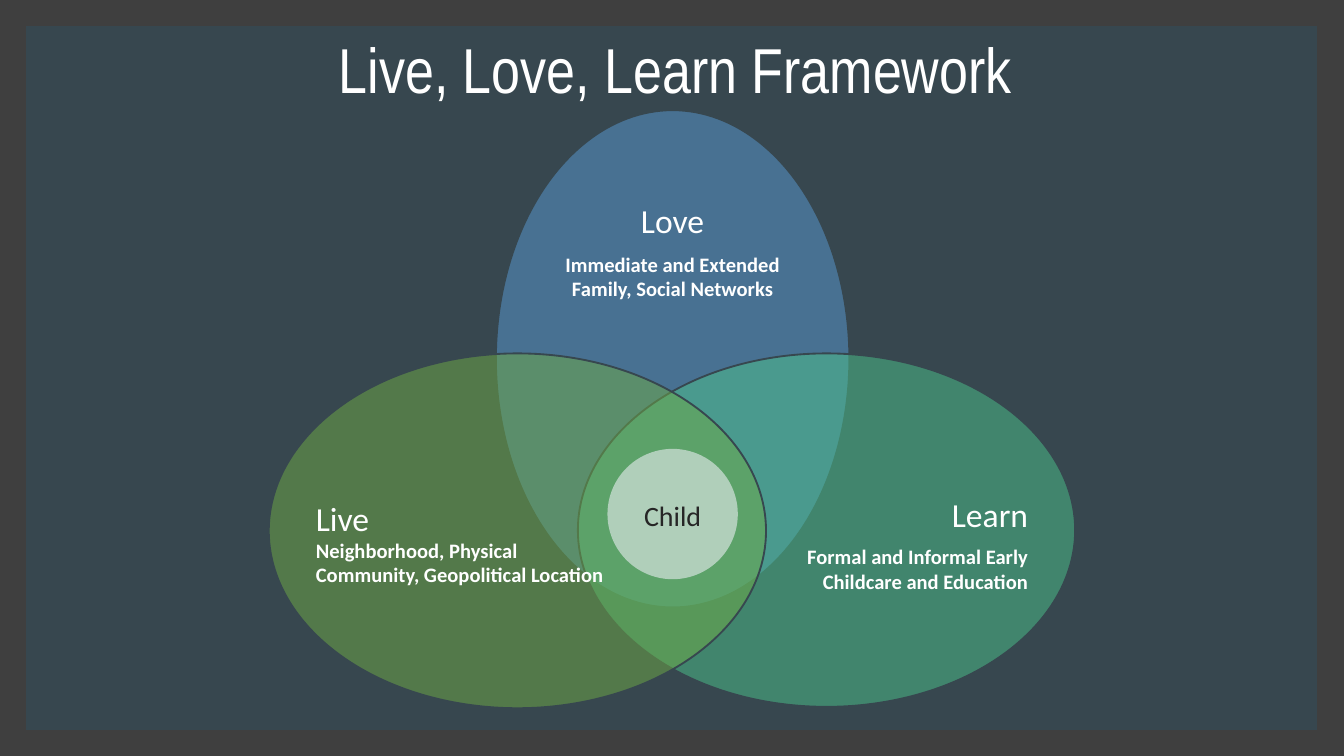
from pptx import Presentation
from pptx.dml.color import RGBColor
from pptx.enum.shapes import MSO_SHAPE
from pptx.enum.text import MSO_ANCHOR, PP_ALIGN
from pptx.oxml.ns import qn
from pptx.util import Inches, Pt
from lxml import etree

FRAME = RGBColor(0x3F, 0x3F, 0x3F)
SLATE = RGBColor(0x37, 0x47, 0x4F)
BLUE = RGBColor(0x59, 0x9B, 0xD5)
TEAL = RGBColor(0x4C, 0xC3, 0x8C)
GREEN = RGBColor(0x6F, 0xAB, 0x46)
PALE = RGBColor(0xE9, 0xED, 0xF1)
WHITE = RGBColor(0xFF, 0xFF, 0xFF)
DARK = RGBColor(0x26, 0x26, 0x26)
WIDE = 10
HIGH = WIDE * 9 / 16


def write(par, text, size=11, font="Calibri", color=WHITE, bold=False,
          align=PP_ALIGN.LEFT, lead=1.0, before=0):
    par.alignment = align
    par.line_spacing = lead
    par.space_before = Pt(before)
    run = par.add_run()
    run.text = text
    run.font.size = Pt(size)
    run.font.name = font
    run.font.bold = bold
    run.font.color.rgb = color


class Canvas:
    def __init__(self, slide):
        self.slide = slide
        fill = slide.background.fill
        fill.solid()
        fill.fore_color.rgb = SLATE

    def shape(self, kind, box, color, alpha=100, line=0):
        item = self.slide.shapes.add_shape(kind, *map(Inches, box))
        item.shadow.inherit = False
        item.fill.solid()
        item.fill.fore_color.rgb = color
        if alpha < 100:
            tone = item.fill._xPr.find(qn("a:solidFill"))[0]
            etree.SubElement(tone, qn("a:alpha")).set("val", str(alpha * 1000))
        if line:
            item.line.color.rgb = SLATE
            item.line.width = Pt(line)
            edge = item.line._get_or_add_ln()
            etree.SubElement(edge, qn("a:miter")).set("lim", "800000")
        else:
            item.line.fill.background()
        return item

    def frame(self, item, anchor=MSO_ANCHOR.MIDDLE, pad=(0.07, 0.04)):
        body = item.text_frame
        body.word_wrap = True
        body.vertical_anchor = anchor
        body.margin_left = body.margin_right = Inches(pad[0])
        body.margin_top = body.margin_bottom = Inches(pad[1])
        return body

    def box(self, box, **style):
        item = self.slide.shapes.add_textbox(*map(Inches, box))
        return self.frame(item, **style)

    def label(self, box, head, note, align, gap=0, lead=1.0,
              anchor=MSO_ANCHOR.MIDDLE):
        body = self.box(box, anchor=anchor, pad=(0, 0))
        write(body.paragraphs[0], head, size=18, align=align, lead=lead)
        write(body.add_paragraph(), note, bold=True, align=align, before=gap)


def main():
    deck = Presentation()
    deck.slide_width, deck.slide_height = Inches(WIDE), Inches(HIGH)
    art = Canvas(deck.slides.add_slide(deck.slide_layouts[6]))
    art.shape(MSO_SHAPE.RECTANGLE, (0, 0, WIDE, HIGH), FRAME)
    art.shape(MSO_SHAPE.RECTANGLE, (0.26, 0.26, 9.47, 5.1), SLATE, line=10)

    title = art.box((0.63, 0, 8.79, 1.09))
    write(title.paragraphs[0], "Live, Love, Learn Framework", size=34,
          font="Arial Narrow", align=PP_ALIGN.CENTER, lead=0.9)

    rings = [
        ((3.69, 0.82, 2.63, 3.7), BLUE, (4.04, 1.52, 1.93, 1.62), "Love",
         "Immediate and Extended Family, Social Networks",
         dict(align=PP_ALIGN.CENTER, gap=6, lead=0.9, anchor=MSO_ANCHOR.TOP)),
        ((4.3, 2.63, 3.7, 2.63), TEAL, (5.43, 3.32, 2.22, 1.45), "Learn",
         "Formal and Informal Early Childcare and Education",
         dict(align=PP_ALIGN.RIGHT, gap=5)),
        ((2, 2.63, 3.7, 2.64), GREEN, (2.35, 3.31, 2.22, 1.45), "Live",
         "Neighborhood, Physical Community, Geopolitical Location",
         dict(align=PP_ALIGN.LEFT)),
    ]
    for oval, color, area, head, note, style in rings:
        art.shape(MSO_SHAPE.OVAL, oval, color, alpha=50, line=1)
        art.label(area, head, note, **style)

    core = art.shape(MSO_SHAPE.OVAL, (4.52, 3.34, 0.97, 0.97), PALE, alpha=60)
    write(art.frame(core).paragraphs[0], "Child", size=15, color=DARK,
          align=PP_ALIGN.CENTER, lead=1.07)
    deck.save("out.pptx")


if __name__ == "__main__":
    main()
